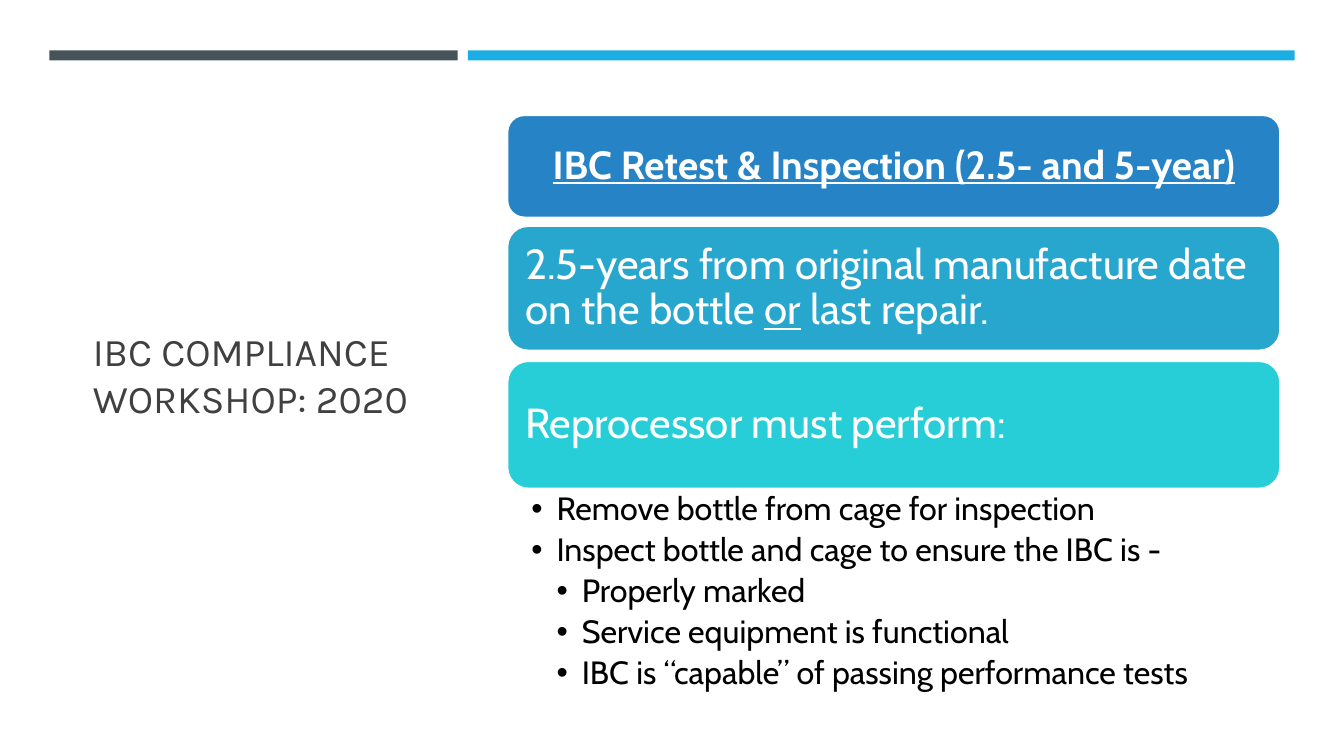
from lxml.etree import SubElement
from pptx import Presentation
from pptx.dml.color import RGBColor
from pptx.enum.shapes import MSO_SHAPE
from pptx.enum.text import MSO_ANCHOR, MSO_AUTO_SIZE, PP_ALIGN
from pptx.oxml.ns import qn
from pptx.util import Inches, Pt


def color(hex_string):
    return RGBColor.from_string(hex_string)


def add_run(paragraph, text, size, hex_string, font="Cabin", **formats):
    run = paragraph.add_run()
    run.text = text
    values = {"name": font, "size": Pt(size), **formats}
    for attribute, value in values.items():
        setattr(run.font, attribute, value)
    run.font.color.rgb = color(hex_string)


deck = Presentation()
deck.slide_width, deck.slide_height = Inches(13.33), Inches(7.5)
slide = deck.slides.add_slide(deck.slide_layouts[1])
heading, checklist = slide.placeholders

# Column and row edges, in inches
RIGHT_COLUMN, RIGHT_WIDTH = 5.03, 7.67
CONTENT_TOP = 1.14

# Title on the left
heading.left, heading.top = Inches(0.82), Inches(CONTENT_TOP)
heading.width, heading.height = Inches(3.34), Inches(5.15)
heading_format = {"word_wrap": True, "auto_size": MSO_AUTO_SIZE.NONE,
                  "vertical_anchor": MSO_ANCHOR.MIDDLE}
for attribute, value in heading_format.items():
    setattr(heading.text_frame, attribute, value)
heading_line = heading.text_frame.paragraphs[0]
heading_line.alignment = PP_ALIGN.LEFT
add_run(heading_line, "IBC COMPLIANCE WORKSHOP: 2020", 28, "404040", "Karla")

# Two bars across the top
for left, width, fill in [(0.49, 4.05, "465359"), (4.64, 8.2, "1CADE4")]:
    bar = slide.shapes.add_shape(MSO_SHAPE.RECTANGLE, Inches(left), Inches(0.5),
                                 Inches(width), Inches(0.1))
    bar.shadow.inherit = False
    bar.fill.solid()
    bar.fill.fore_color.rgb = color(fill)
    bar.line.fill.background()

# Cards: top, height, fill, alignment, size, runs of (text, format)
underlined = {"underline": True}
cards = [
    (CONTENT_TOP, 1.02, "2683C6", PP_ALIGN.CENTER, 28,
     [("IBC Retest & Inspection (2.5- and 5-year)", {"bold": True, **underlined})]),
    (2.24, 1.24, "27A7CE", PP_ALIGN.LEFT, 30,
     [("2.5-years from original manufacture date on the bottle ", {}),
      ("or", underlined), (" last repair.", {})]),
    (3.58, 1.27, "27CED7", PP_ALIGN.LEFT, 30,
     [("Reprocessor must perform:", {})]),
]
card_format = {"word_wrap": True, "vertical_anchor": MSO_ANCHOR.MIDDLE}
for side in ("left", "top", "right", "bottom"):
    card_format[f"margin_{side}"] = Inches(0.12)

for top, height, fill, alignment, size, runs in cards:
    card = slide.shapes.add_shape(MSO_SHAPE.ROUNDED_RECTANGLE, Inches(RIGHT_COLUMN),
                                  Inches(top), Inches(RIGHT_WIDTH), Inches(height))
    card.shadow.inherit = False
    card.fill.solid()
    card.fill.fore_color.rgb = color(fill)
    card.line.color.rgb = color("FFFFFF")
    card.line.width = Pt(1.75)
    for attribute, value in card_format.items():
        setattr(card.text_frame, attribute, value)
    statement = card.text_frame.paragraphs[0]
    statement.alignment = alignment
    statement.line_spacing = 0.9
    for text, formats in runs:
        add_run(statement, text, size, "FFFFFF", **formats)

# Bulleted checklist under the last card
checklist.left, checklist.top = Inches(RIGHT_COLUMN), Inches(4.85)
checklist.width, checklist.height = Inches(RIGHT_WIDTH), Inches(2.11)
checklist_format = {
    "word_wrap": True, "auto_size": MSO_AUTO_SIZE.NONE, "vertical_anchor": MSO_ANCHOR.TOP,
    "margin_left": Inches(0.24), "margin_right": Inches(0.23),
    "margin_top": Inches(0.04), "margin_bottom": Inches(0.04),
}
for attribute, value in checklist_format.items():
    setattr(checklist.text_frame, attribute, value)

duties = [
    (1, "Remove bottle from cage for inspection"),
    (1, "Inspect bottle and cage to ensure the IBC is -"),
    (2, "Properly marked"),
    (2, "Service equipment is functional"),
    (2, "IBC is “capable” of passing performance tests"),
]
duty_format = {"line_spacing": 0.9, "space_before": Pt(0), "space_after": Pt(4.4),
               "alignment": PP_ALIGN.LEFT}
for index, (level, text) in enumerate(duties):
    lines = checklist.text_frame
    duty = lines.add_paragraph() if index else lines.paragraphs[0]
    duty.level = level
    for attribute, value in duty_format.items():
        setattr(duty, attribute, value)
    properties = duty._p.get_or_add_pPr()
    properties.set("marL", str(Inches(0.25 * level)))
    properties.set("indent", str(-Inches(0.25)))
    SubElement(properties, qn("a:buFont")).set("typeface", "Arial")
    SubElement(properties, qn("a:buChar")).set("char", "•")
    add_run(duty, text, 23, "000000")

deck.save("out.pptx")
